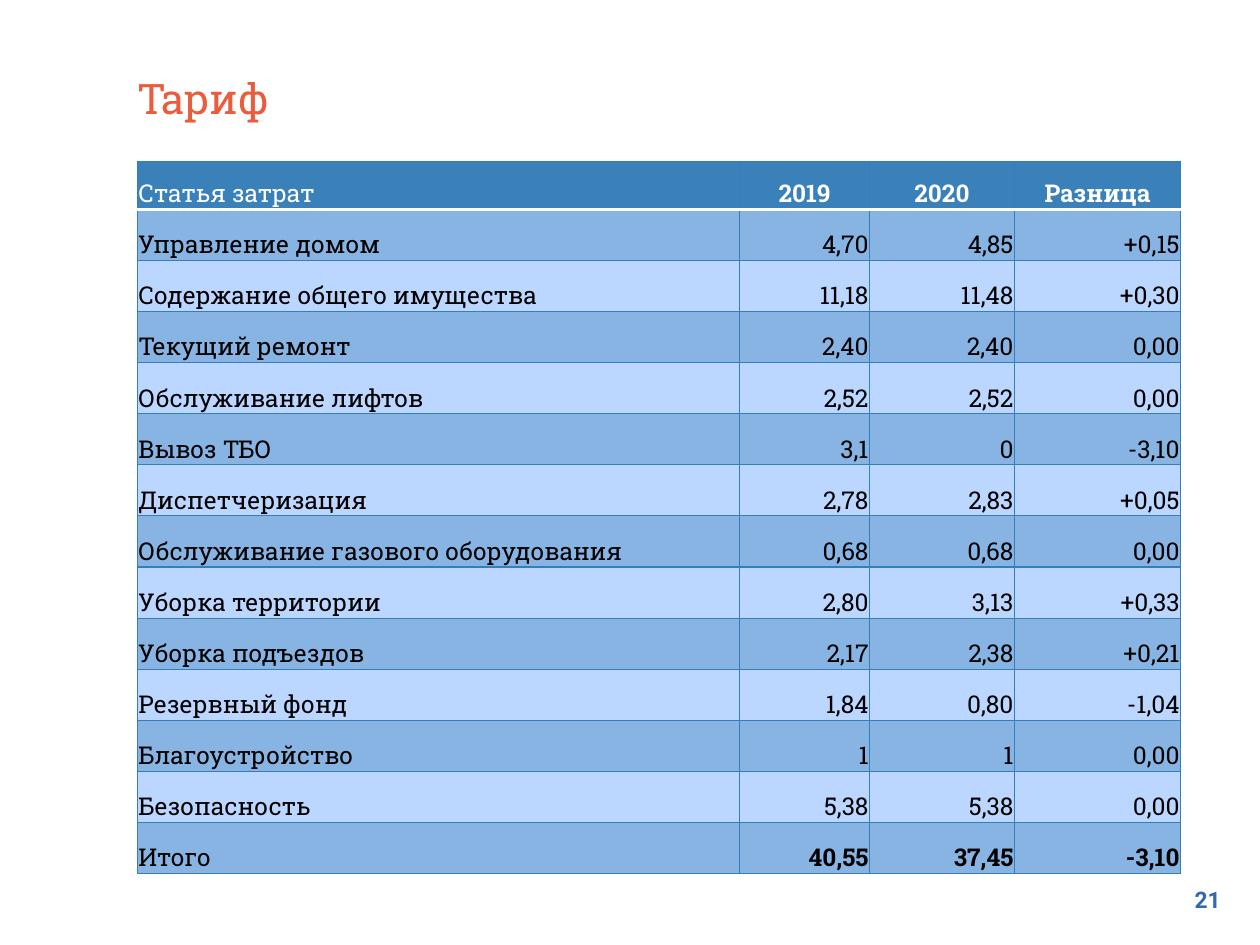
from lxml import etree
from pptx import Presentation
from pptx.dml.color import RGBColor
from pptx.enum.text import MSO_ANCHOR, MSO_AUTO_SIZE, PP_ALIGN
from pptx.oxml.ns import qn
from pptx.util import Cm, Pt

LEFT, CENTER, RIGHT = PP_ALIGN.LEFT, PP_ALIGN.CENTER, PP_ALIGN.RIGHT
TOP, BOTTOM = MSO_ANCHOR.TOP, MSO_ANCHOR.BOTTOM
NO_AUTOFIT = MSO_AUTO_SIZE.NONE

THEME = {
    "slab": "Roboto Slab", "sans": "Roboto",
    "title_size": 24, "cell_size": 14, "number_size": 13,
    "title": "EA5C3B", "number": "3469B1",
    "header": "3A81BA", "dark_band": "87B4E3", "light_band": "BBD6FF",
    "rule": "367EB9", "white": "FFFFFF", "black": "000000",
}

COLUMN_WIDTHS = [12.14, 2.62, 2.92, 3.35]
HEADER_HEIGHT, ROW_HEIGHT = 0.97, 1.03
TARIFF = [
    ("Статья затрат", "2019", "2020", "Разница"),
    ("Управление домом", "4,70", "4,85", "+0,15"),
    ("Содержание общего имущества", "11,18", "11,48", "+0,30"),
    ("Текущий ремонт", "2,40", "2,40", "0,00"),
    ("Обслуживание лифтов", "2,52", "2,52", "0,00"),
    ("Вывоз ТБО", "3,1", "0", "-3,10"),
    ("Диспетчеризация", "2,78", "2,83", "+0,05"),
    ("Обслуживание газового оборудования", "0,68", "0,68", "0,00"),
    ("Уборка территории", "2,80", "3,13", "+0,33"),
    ("Уборка подъездов", "2,17", "2,38", "+0,21"),
    ("Резервный фонд", "1,84", "0,80", "-1,04"),
    ("Благоустройство", "1", "1", "0,00"),
    ("Безопасность", "5,38", "5,38", "0,00"),
    ("Итого", "40,55", "37,45", "-3,10"),
]


def write(frame, text, font, size, color, align=LEFT, bold=False):
    para = frame.paragraphs[0]
    para.alignment = align
    span = para.add_run()
    span.text = text
    formats = {"name": THEME[font], "size": Pt(THEME[size]), "bold": bold}
    for name, value in formats.items():
        setattr(span.font, name, value)
    span.font.color.rgb = RGBColor.from_string(THEME[color])


def add_border(cell, side, color, points):
    properties = cell._tc.get_or_add_tcPr()
    line = etree.SubElement(properties, qn(f"a:ln{side}"), w=str(Pt(points)))
    fill = etree.SubElement(line, qn("a:solidFill"))
    etree.SubElement(fill, qn("a:srgbClr"), val=THEME[color])


deck = Presentation()
deck.slide_width, deck.slide_height = Cm(25.4), Cm(19.05)
page = deck.slides.add_slide(deck.slide_layouts[5])

title = page.shapes.title
title.left, title.top, title.width, title.height = Cm(2.31), Cm(0.13), Cm(21.03), Cm(2.59)
number = page.shapes.add_textbox(Cm(23.34), Cm(17.6), Cm(1.52), Cm(1.45))
for box, anchor, inset in ((title, BOTTOM, 0.46), (number, TOP, 0.25)):
    settings = {
        "word_wrap": True, "auto_size": NO_AUTOFIT, "vertical_anchor": anchor,
        "margin_left": Cm(inset), "margin_right": Cm(0.25),
        "margin_top": Cm(0.25), "margin_bottom": Cm(0.25),
    }
    for name, value in settings.items():
        setattr(box.text_frame, name, value)
write(title.text_frame, "Тариф", "slab", "title_size", "title")
write(number.text_frame, "21", "sans", "number_size", "number", RIGHT, True)

last_row = len(TARIFF) - 1
table_height = HEADER_HEIGHT + ROW_HEIGHT * last_row
table = page.shapes.add_table(
    len(TARIFF), len(COLUMN_WIDTHS),
    Cm(2.77), Cm(3.25), Cm(sum(COLUMN_WIDTHS)), Cm(table_height),
).table
table.horz_banding = False
for column, width in zip(table.columns, COLUMN_WIDTHS):
    column.width = Cm(width)

cell_settings = {
    "vertical_anchor": BOTTOM, "margin_left": Cm(0.02), "margin_right": Cm(0.02),
    "margin_top": Cm(0.02), "margin_bottom": Cm(0),
}
for row, values in enumerate(TARIFF):
    header = row == 0
    table.rows[row].height = Cm(HEADER_HEIGHT if header else ROW_HEIGHT)
    band = "header" if header else "dark_band" if row % 2 else "light_band"
    for column, value in enumerate(values):
        cell = table.cell(row, column)
        for name, setting in cell_settings.items():
            setattr(cell, name, setting)
        align = LEFT if column == 0 else CENTER if header else RIGHT
        bold = column > 0 and row in (0, last_row)
        color = "white" if header else "black"
        write(cell.text_frame, value, "slab", "cell_size", color, align, bold)
        for side in "LRTB":
            under_header = (row, side) in ((0, "B"), (1, "T"))
            add_border(cell, side, *(("white", 2) if under_header else ("rule", 0.75)))
        cell.fill.solid()
        cell.fill.fore_color.rgb = RGBColor.from_string(THEME[band])

deck.save("out.pptx")
